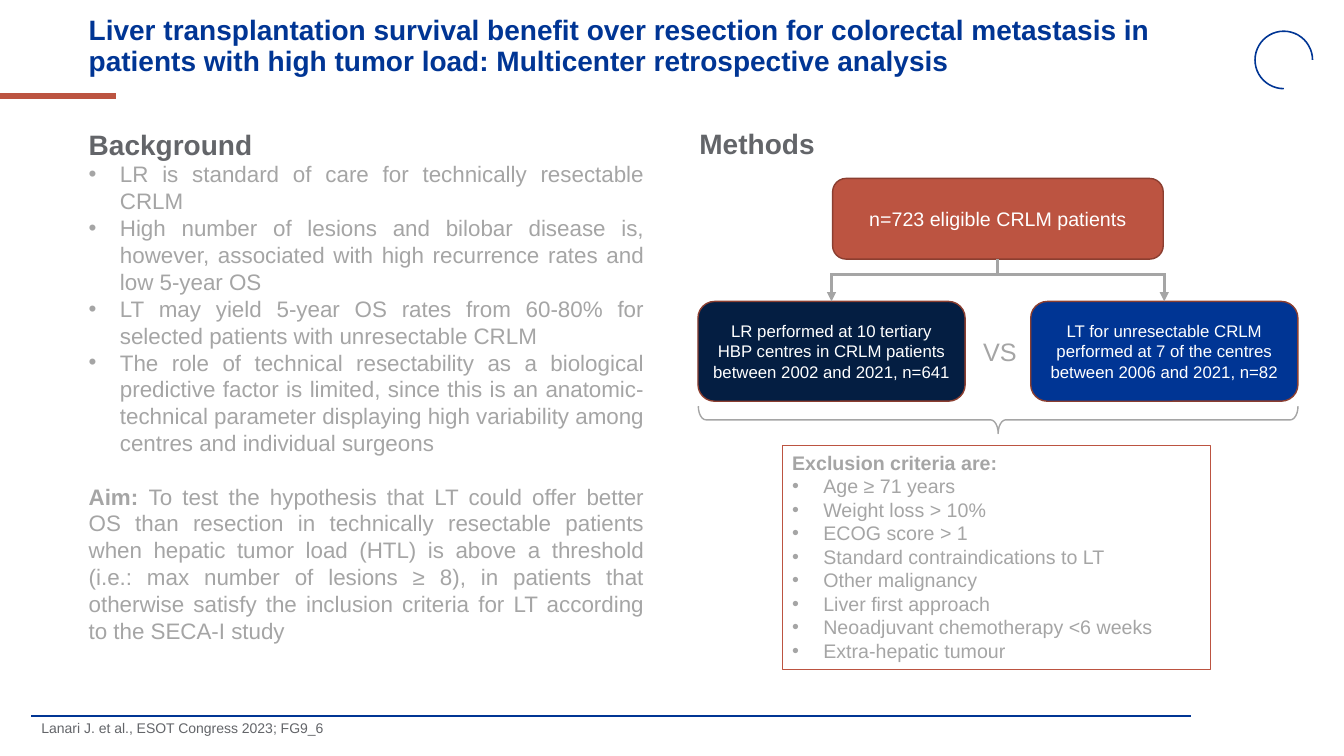
from dataclasses import dataclass

from lxml import etree
from pptx import Presentation
from pptx import util as u
from pptx.dml.color import RGBColor
from pptx.enum import shapes, text
from pptx.oxml.ns import qn


@dataclass(frozen=True)
class Theme:
    font: str = "Arial"
    blue: str = "003594"
    navy: str = "041E42"
    red: str = "BC5441"
    edge: str = "8B3E30"
    dark: str = "636569"
    grey: str = "A5A5A5"
    white: str = "FFFFFF"
    heading: int = 20
    versus: int = 18
    body: int = 16
    box: int = 14
    small: int = 12
    source: int = 10


T = Theme()
W, H = u.Inches(13.333), u.Inches(7.5)
COL, ROW = W / 100, H / 100
INDENT = u.Inches(0.31)
FLOW_MID, FLOW_ARM = 74.25, 12.38
ALIGN, ANCHOR = text.PP_ALIGN, text.MSO_ANCHOR

BACKGROUND = [
    "LR is standard of care for technically resectable CRLM",
    "High number of lesions and bilobar disease is, however, associated with "
    "high recurrence rates and low 5-year OS",
    "LT may yield 5-year OS rates from 60-80% for selected patients with "
    "unresectable CRLM",
    "The role of technical resectability as a biological predictive factor is "
    "limited, since this is an anatomic-technical parameter displaying high "
    "variability among centres and individual surgeons",
]
AIM = (
    "To test the hypothesis that LT could offer better OS than resection in "
    "technically resectable patients when hepatic tumor load (HTL) is above a "
    "threshold (i.e.: max number of lesions ≥ 8), in patients that otherwise "
    "satisfy the inclusion criteria for LT according to the SECA-I study"
)
EXCLUSIONS = [
    "Age ≥ 71 years",
    "Weight loss > 10%",
    "ECOG score > 1",
    "Standard contraindications to LT",
    "Other malignancy",
    "Liver first approach",
    "Neoadjuvant chemotherapy <6 weeks",
    "Extra-hepatic tumour",
]


def grid(x, y, w, h):
    return round(x * COL), round(y * ROW), round(w * COL), round(h * ROW)


def place(sp, *cell):
    sp.left, sp.top, sp.width, sp.height = grid(*cell)
    return sp


def frame(sp, anchor=ANCHOR.TOP, wrap=True):
    tf = sp.text_frame
    tf.word_wrap = wrap
    tf.auto_size = text.MSO_AUTO_SIZE.NONE
    tf.vertical_anchor = anchor
    return tf


def add_run(p, words, size, color, bold=False):
    r = p.add_run()
    r.text = words
    r.font.name = T.font
    r.font.size = u.Pt(size)
    r.font.bold = bold
    r.font.color.rgb = RGBColor.from_string(color)


def add_para(tf, align=ALIGN.LEFT, bullet=False, before=0, spacing=1.0):
    p = tf.paragraphs[0]
    if p.runs:
        p = tf.add_paragraph()
    pPr = p._p.get_or_add_pPr()
    pPr.set("marL", str(INDENT if bullet else 0))
    pPr.set("indent", str(-INDENT if bullet else 0))
    if bullet:
        etree.SubElement(pPr, qn("a:buFont")).set("typeface", T.font)
        etree.SubElement(pPr, qn("a:buChar")).set("char", "•")
    else:
        etree.SubElement(pPr, qn("a:buNone"))
    p.alignment = align
    p.space_before = u.Pt(before)
    p.line_spacing = spacing
    return p


def add_bullets(tf, items, size, align=ALIGN.LEFT):
    for item in items:
        add_run(add_para(tf, align, bullet=True), item, size, T.grey)


def add_label(s, cell, words, size, color, bold=False, align=ALIGN.LEFT, wrap=True):
    sp = s.shapes.add_textbox(*grid(*cell))
    add_run(add_para(frame(sp, wrap=wrap), align), words, size, color, bold)


def add_figure(s, kind, cell, line, width, fill=None):
    sp = s.shapes.add_shape(kind, *grid(*cell))
    sp.shadow.inherit = False
    if fill:
        sp.fill.solid()
        sp.fill.fore_color.rgb = RGBColor.from_string(fill)
    else:
        sp.fill.background()
    sp.line.color.rgb = RGBColor.from_string(line)
    sp.line.width = u.Pt(width)
    return sp


def add_box(s, mid, y, w, h, fill, words, size):
    cell = (mid - w / 2, y, w, h)
    sp = add_figure(s, shapes.MSO_SHAPE.ROUNDED_RECTANGLE, cell, T.edge, 1, fill)
    p = add_para(frame(sp, ANCHOR.MIDDLE), ALIGN.CENTER)
    add_run(p, words, size, T.white)
    return sp


def add_line(s, start, end, color, width, arrow=False, cap="flat"):
    ends = [round(v * unit) for pt in (start, end) for v, unit in zip(pt, (COL, ROW))]
    cx = s.shapes.add_connector(shapes.MSO_CONNECTOR.STRAIGHT, *ends)
    cx.line.color.rgb = RGBColor.from_string(color)
    cx.line.width = u.Pt(width)
    ln = cx.line._get_or_add_ln()
    ln.set("cap", cap)
    if arrow:
        etree.SubElement(ln, qn("a:tailEnd")).set("type", "triangle")
    etree.SubElement(cx._element.spPr, qn("a:effectLst"))
    return cx


def add_decor(s):
    add_line(s, (0, 12.67), (8.63, 12.67), T.red, 4.5)
    add_line(s, (2.33, 94.67), (88.65, 94.67), T.blue, 1.5)
    arc = add_figure(s, shapes.MSO_SHAPE.ARC, (93.38, 4.13, 4.28, 7.6), T.blue, 1.13)
    arc.adjustments[0], arc.adjustments[1] = 54, 0


def fill_placeholders(s):
    title = place(s.shapes.title, 5.85, 1.33, 86.25, 9.73)
    p = add_para(frame(title, ANCHOR.MIDDLE), spacing=0.9)
    add_run(p, "Liver transplantation survival benefit over resection for colorectal "
            "metastasis in patients with high tumor load: Multicenter retrospective "
            "analysis", T.heading, T.blue, True)

    tf = frame(place(s.placeholders[1], 5.85, 16.13, 42.83, 70.4))
    add_run(add_para(tf), "Background", T.heading, T.dark, True)
    add_bullets(tf, BACKGROUND, T.body, ALIGN.JUSTIFY)
    p = add_para(tf, ALIGN.JUSTIFY, before=19)
    add_run(p, "Aim: ", T.body, T.grey, True)
    add_run(p, AIM, T.body, T.grey)

    tf = frame(place(s.placeholders[2], 2.33, 94.8, 58.8, 4.53))
    add_run(add_para(tf, spacing=0.9), "Lanari J. et al., ESOT Congress 2023; FG9_6",
            T.source, T.dark)


def add_flow(s):
    left, right = FLOW_MID - FLOW_ARM, FLOW_MID + FLOW_ARM
    top, bar = 39.87, 36.27
    eligible = add_box(s, FLOW_MID, 23.6, 24.6, 10.67, T.red,
                       "n=723 eligible CRLM patients", T.box)
    arms = [
        (left, T.navy, "LR performed at 10 tertiary HBP centres in CRLM patients "
         "between 2002 and 2021, n=641"),
        (right, T.blue, "LT for unresectable CRLM performed at 7 of the centres "
         "between 2006 and 2021, n=82"),
    ]
    trunk = add_line(s, (FLOW_MID, 34.27), (FLOW_MID, bar), T.grey, 2.25)
    trunk.begin_connect(eligible, 2)
    add_line(s, (left, bar), (right, bar), T.grey, 2.25, cap="sq")
    for mid, fill, words in arms:
        arm = add_box(s, mid, top, 19.88, 13.2, fill, words, T.small)
        arrow = add_line(s, (mid, bar), (mid, top), T.grey, 2.25, arrow=True)
        arrow.end_connect(arm, 0)
    add_label(s, (FLOW_MID - 1.95, 43.87, 4.2, 5.33), "VS", T.versus, T.grey,
              align=ALIGN.CENTER, wrap=False)

    brace = add_figure(s, shapes.MSO_SHAPE.RIGHT_BRACE,
                       (FLOW_MID - 1, 15.87, 2.03, 79.33), T.grey, 1)
    brace.adjustments[0], brace.adjustments[1] = 0.28, 0.5
    brace.rotation = 90


def add_exclusions(s):
    sp = add_figure(s, shapes.MSO_SHAPE.RECTANGLE, (58.2, 58.93, 31.88, 29.6), T.red, 0.75)
    tf = frame(sp)
    add_run(add_para(tf), "Exclusion criteria are:", T.box, T.grey, True)
    add_bullets(tf, EXCLUSIONS, T.box)


def main():
    prs = Presentation()
    prs.slide_width, prs.slide_height = W, H
    s = prs.slides.add_slide(prs.slide_layouts[3])
    add_decor(s)
    fill_placeholders(s)
    add_label(s, (51.3, 16.13, 42.83, 5.87), "Methods", T.heading, T.dark, True)
    add_flow(s)
    add_exclusions(s)
    prs.save("out.pptx")


if __name__ == "__main__":
    main()
